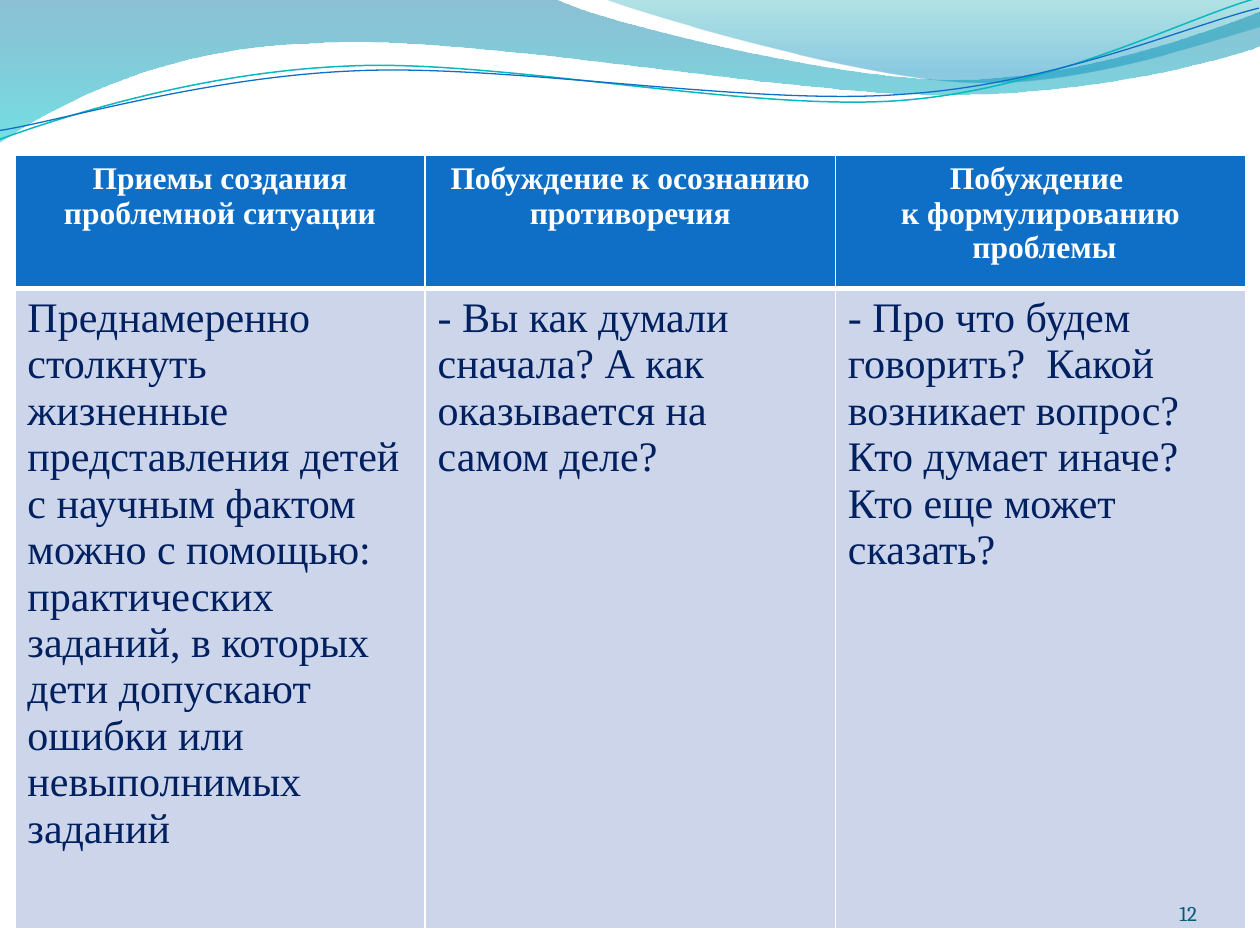
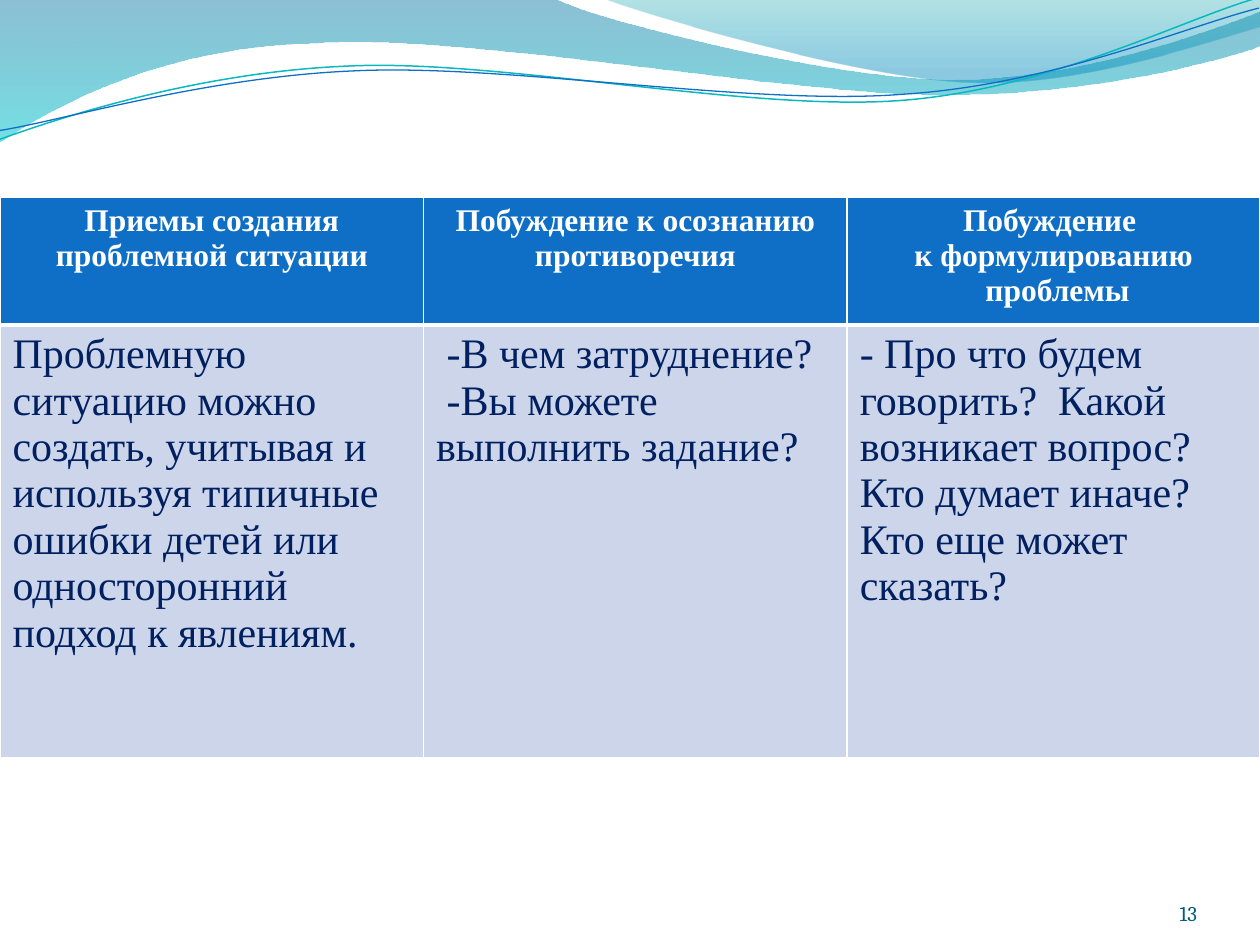
"""Build two slides on problem situations: a wave band, a three-column table and a page number."""
from dataclasses import dataclass

from lxml import etree
from pptx import Presentation
from pptx import util as u
from pptx.dml.color import RGBColor
from pptx.enum import text
from pptx.oxml.ns import qn

HEADERS = [
    ["Приемы создания", "проблемной ситуации"],
    ["Побуждение к осознанию противоречия"],
    ["Побуждение ", "к формулированию", " проблемы"],
]
PROBLEM_PROMPTS = [
    "- Про что будем говорить?  Какой возникает вопрос?",
    "Кто думает иначе?",
    "Кто еще может сказать?",
]
PAGES = [
    {
        "number": "12", "left": 0.3, "top": 3.12,
        "columns": [8.27, 8.27, 8.27], "rows": [2.7, 12.9],
        "body": [
            ["Преднамеренно столкнуть жизненные представления детей  с научным фактом "
             "можно с помощью: практических заданий, в которых дети допускают ошибки "
             "или невыполнимых заданий"],
            ["- Вы как думали сначала? А как оказывается на самом деле?"],
            PROBLEM_PROMPTS,
        ],
    },
    {
        "number": "13", "left": 0, "top": 3.97,
        "columns": [8.54, 8.54, 8.32], "rows": [2.58, 8.73],
        "body": [
            ["Проблемную ситуацию можно создать, учитывая и используя типичные ошибки "
             "детей или односторонний подход к явлениям."],
            [" -В чем затруднение?", " -Вы можете выполнить задание?"],
            PROBLEM_PROMPTS,
        ],
    },
]

# Wave points are in tenths of the page width: one point draws a line, three a curve.
WAVES = [
    {"start": (0, 0), "stops": [(0, "0074A1", 45), (1, "00C6CF", 55)],
     "steps": [[(4.4, -0.01)],
               [(4.76, 0.17), (6.64, 0.63), (7.58, 0.63)],
               [(8.53, 0.63), (9.58, 0.26), (10, 0.09)],
               [(10.01, 0.36)],
               [(9.83, 0.44), (8.7, 0.76), (7.46, 0.75)],
               [(6.22, 0.75), (3.82, 0.28), (2.57, 0.34)],
               [(1.29, 0.36), (0.46, 0.83), (-0.01, 1.13)]]},
    {"start": (4.79, -0.01), "stops": [(0, "00A1A9", 30), (0.8, "008BBF", 45)],
     "steps": [[(5.09, 0.11), (6.82, 0.62), (7.69, 0.65)],
               [(8.56, 0.69), (9.61, 0.32), (10, 0.21)],
               [(10, 0)]]},
    {"start": (-0.02, 0.87), "line": ("0AB8BF", 0.85),
     "steps": [[(0.47, 0.72), (1.58, 0.41), (2.78, 0.42)],
               [(3.96, 0.42), (5.91, 0.93), (7.12, 0.9)],
               [(8.32, 0.87), (9.4, 0.36), (10, 0.22)]]},
    {"start": (-0.02, 0.8), "line": ("0F6FC6", 0.75),
     "steps": [[(0.46, 0.75), (1.64, 0.45), (2.83, 0.46)],
               [(4.03, 0.46), (5.96, 0.89), (7.16, 0.85)],
               [(8.35, 0.83), (9.42, 0.42), (10.01, 0.3)]]},
]


@dataclass(frozen=True)
class Theme:
    header_fill: str = "0F6FC6"
    body_fill: str = "CCD5EA"
    border: str = "FFFFFF"
    thin: float = 1
    thick: float = 3
    line_tilt: float = 357.3
    header = {"size": u.Pt(18), "name": "Times New Roman", "bold": True, "color": "FFFFFF"}
    body = {"size": u.Pt(24), "name": "Times New Roman", "bold": False, "color": "002060"}
    number = {"size": u.Pt(12), "name": "Cambria", "bold": False, "color": "045D75"}


THEME = Theme()


def write(frame, lines, font, align):
    for index, line in enumerate(lines):
        para = frame.paragraphs[0] if index == 0 else frame.add_paragraph()
        para.alignment = align
        span = para.add_run()
        span.text = line
        for key, value in font.items():
            if key == "color":
                span.font.color.rgb = RGBColor.from_string(value)
            else:
                setattr(span.font, key, value)


def bend(shape, steps):
    segments = iter(list(shape.element.iter(qn("a:lnTo"))))
    for step in steps:
        first, *others = [next(segments) for _ in step]
        if others:
            first.tag = qn("a:cubicBezTo")
        for other in others:
            first.append(other[0])
            other.getparent().remove(other)


def add_wave(page, wave, unit):
    points = [(x * unit, y * unit)
              for x, y in [wave["start"], *(point for step in wave["steps"] for point in step)]]
    builder = page.shapes.build_freeform(*points[0])
    builder.add_line_segments(points[1:], close="stops" in wave)
    shape = builder.convert_to_shape()
    bend(shape, wave["steps"])
    shape.shadow.inherit = False
    if "line" in wave:
        color, width = wave["line"]
        shape.rotation = THEME.line_tilt
        shape.fill.background()
        shape.line.color.rgb = RGBColor.from_string(color)
        shape.line.width = u.Pt(width)
        return
    shape.line.fill.background()
    shape.fill.gradient()
    shape.fill.gradient_angle = 270
    for stop, (position, color, _) in zip(shape.fill.gradient_stops, wave["stops"]):
        stop.position = position
        stop.color.rgb = RGBColor.from_string(color)
    tints = shape.element.spPr.findall(".//" + qn("a:gs") + "/" + qn("a:srgbClr"))
    for tint, (_, _, opacity) in zip(tints, wave["stops"]):
        etree.SubElement(tint, qn("a:alpha"), val=str(opacity * 1000))


def add_borders(cell, widths):
    properties = cell._tc.get_or_add_tcPr()
    for index, (side, width) in enumerate(widths.items()):
        line = etree.Element(qn("a:ln" + side), w=str(u.Pt(width)))
        fill = etree.SubElement(line, qn("a:solidFill"))
        etree.SubElement(fill, qn("a:srgbClr"), val=THEME.border)
        properties.insert(index, line)


def add_table(page, content):
    columns, rows = content["columns"], content["rows"]
    table = page.shapes.add_table(
        len(rows), len(columns), u.Cm(content["left"]), u.Cm(content["top"]),
        u.Cm(sum(columns)), u.Cm(sum(rows))).table
    for column, width in zip(table.columns, columns):
        column.width = u.Cm(width)
    for row, height in zip(table.rows, rows):
        row.height = u.Cm(height)
    thin, thick = THEME.thin, THEME.thick
    styles = [
        (HEADERS, THEME.header, THEME.header_fill, text.PP_ALIGN.CENTER, thin, thick),
        (content["body"], THEME.body, THEME.body_fill, text.PP_ALIGN.LEFT, thick, thin),
    ]
    for row, (cells, font, fill, align, above, below) in enumerate(styles):
        for column, lines in enumerate(cells):
            cell = table.cell(row, column)
            cell.fill.solid()
            cell.fill.fore_color.rgb = RGBColor.from_string(fill)
            add_borders(cell, {"L": thin, "R": thin, "T": above, "B": below})
            write(cell.text_frame, lines, font, align)


def add_number(page, number):
    box = page.shapes.add_textbox(u.Cm(22.02), u.Cm(17.65), u.Cm(2.11), u.Cm(1.02))
    layout = {"word_wrap": True, "vertical_anchor": text.MSO_ANCHOR.BOTTOM, "margin_left": 0,
              "margin_right": 0, "margin_top": 0, "margin_bottom": 0}
    for key, value in layout.items():
        setattr(box.text_frame, key, value)
    write(box.text_frame, [number], THEME.number, text.PP_ALIGN.RIGHT)


def main():
    deck = Presentation()
    deck.slide_width, deck.slide_height = u.Cm(25.4), u.Cm(19.05)
    for content in PAGES:
        page = deck.slides.add_slide(deck.slide_layouts[6])
        for wave in WAVES:
            add_wave(page, wave, deck.slide_width / 10)
        add_table(page, content)
        add_number(page, content["number"])
    deck.save("out.pptx")


if __name__ == "__main__":
    main()
